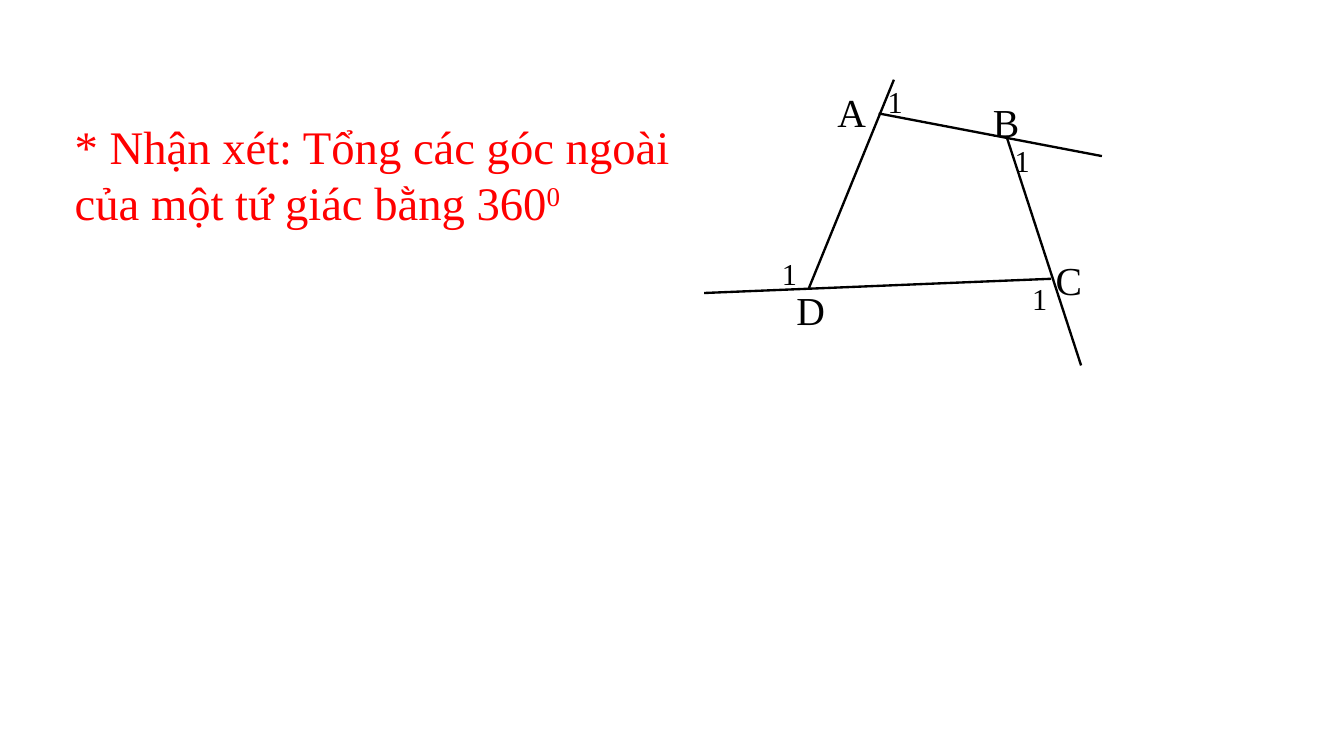
"""Build a slide on the exterior angles of a quadrilateral."""
from pptx import Presentation
from pptx.dml.color import RGBColor
from pptx.enum.shapes import MSO_CONNECTOR
from pptx.enum.text import MSO_ANCHOR, MSO_AUTO_SIZE, PP_ALIGN
from pptx.oxml.ns import qn
from pptx.util import Cm, Pt
from lxml import etree

STRAIGHT = MSO_CONNECTOR.STRAIGHT
TOP = MSO_ANCHOR.TOP
NONE = MSO_AUTO_SIZE.NONE
LEFT = PP_ALIGN.LEFT
BLACK = RGBColor(0, 0, 0)
RED = RGBColor(255, 0, 0)
FONT = "Times New Roman"

REMARK = "* Nhận xét: Tổng các góc ngoài của một tứ giác bằng 360"
POWER = "0"
SIDES = [
    (27.03, 2.41, 24.46, 8.71),
    (21.29, 8.86, 31.78, 8.43),
    (32.69, 11.05, 30.43, 4.11),
    (26.57, 3.43, 33.32, 4.72),
]
CORNERS = [
    ("D", 23.83, 8.53),
    ("A", 25.07, 2.54),
    ("B", 29.77, 2.82),
    ("C", 31.67, 7.62),
]
ANGLES = [
    ("1", 30.96, 8.36),
    ("1", 23.39, 7.59),
    ("1", 26.59, 2.39),
    ("1", 30.43, 4.17),
]


def style(run, size, color):
    run.font.name = FONT
    run.font.size = Pt(size)
    run.font.color.rgb = color


def add_side(slide, ends):
    side = slide.shapes.add_connector(STRAIGHT, *map(Cm, ends))
    side.line.color.rgb = BLACK
    side.line.width = Pt(2)
    etree.SubElement(side.element.spPr, qn("a:effectLst"))


def add_label(slide, label, size, width, height):
    text, left, top = label
    box = slide.shapes.add_textbox(Cm(left), Cm(top), Cm(width), Cm(height))
    frame = box.text_frame
    frame.word_wrap = True
    frame.text = text
    style(frame.paragraphs[0].runs[0], size, BLACK)


def add_remark(slide):
    title = slide.shapes.title
    title.left, title.top = Cm(1.9), Cm(3.38)
    title.width, title.height = Cm(20.17), Cm(3.78)
    frame = title.text_frame
    frame.word_wrap = True
    frame.auto_size = NONE
    frame.vertical_anchor = TOP
    frame.margin_left = frame.margin_right = Cm(0.36)
    frame.margin_top = frame.margin_bottom = Cm(0.18)
    frame.text = REMARK
    line = frame.paragraphs[0]
    line.alignment = LEFT
    power = line.add_run()
    power.text = POWER
    for run in line.runs:
        style(run, 40, RED)
    power.font._element.set("baseline", "30000")


def main():
    deck = Presentation()
    deck.slide_width, deck.slide_height = Cm(40.64), Cm(22.86)
    slide = deck.slides.add_slide(deck.slide_layouts[5])
    for ends in SIDES:
        add_side(slide, ends)
    for corner in CORNERS:
        add_label(slide, corner, 34, 1.6, 1.7)
    for angle in ANGLES:
        add_label(slide, angle, 26, 1.42, 1.37)
    add_remark(slide)
    deck.save("out.pptx")


if __name__ == "__main__":
    main()
